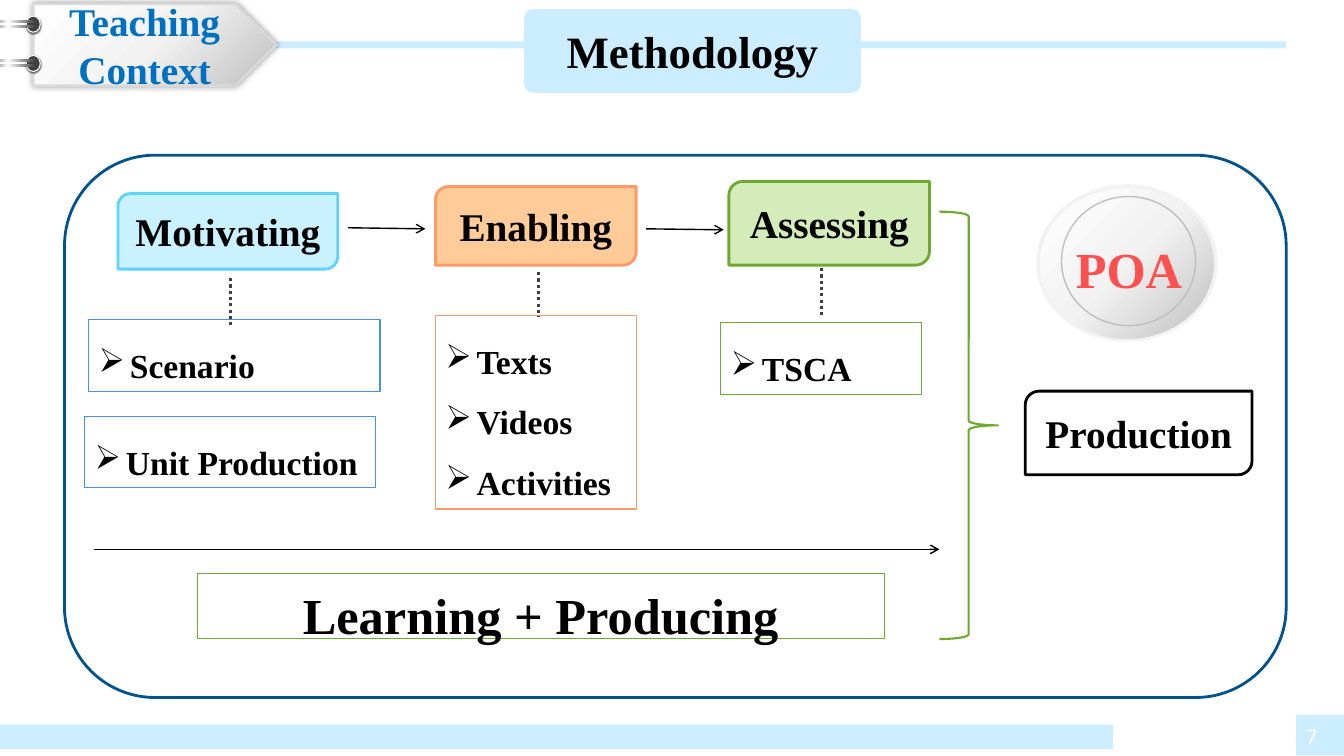
from dataclasses import dataclass

from lxml import etree
from pptx import Presentation
from pptx.dml.color import RGBColor
from pptx.enum.dml import MSO_LINE
from pptx.enum.shapes import MSO_CONNECTOR, MSO_SHAPE
from pptx.enum.text import MSO_ANCHOR, PP_ALIGN
from pptx.oxml.ns import qn
from pptx.util import Inches, Pt

RECTANGLE, ROUNDED = MSO_SHAPE.RECTANGLE, MSO_SHAPE.ROUNDED_RECTANGLE
PLATE, OVAL = MSO_SHAPE.PENTAGON, MSO_SHAPE.OVAL
DONUT, BRACE = MSO_SHAPE.DONUT, MSO_SHAPE.RIGHT_BRACE
STAGE = MSO_SHAPE.ROUND_2_DIAG_RECTANGLE
STRAIGHT, DOTTED = MSO_CONNECTOR.STRAIGHT, MSO_LINE.ROUND_DOT
LEFT, CENTER = PP_ALIGN.LEFT, PP_ALIGN.CENTER
TOP, MIDDLE = MSO_ANCHOR.TOP, MSO_ANCHOR.MIDDLE

FONT = "Times New Roman"
BLACK, PALE, GREEN, BLUE, ORANGE = "000000", "CCECFF", "6EAA2E", "4A8EF2", "FF9966"
SILVER = ((0, "FFFFFF"), (50, "F2F2F2"), (100, "BFBFBF"))
WIRE = ((0, "404040"), (53, "FFFFFF"), (100, "262626"))


@dataclass
class Text:
    """Wording of a shape and how it is set."""
    lines: tuple[str, ...]
    size: float
    color: str = BLACK
    font: str | None = FONT
    bold: bool = True
    align: PP_ALIGN = CENTER
    anchor: MSO_ANCHOR = MIDDLE
    bullet: bool = False
    top_inset: float = 0.05
    wrap: bool = True


@dataclass
class Block:
    """A preset shape placed in percent of the slide's size."""
    kind: MSO_SHAPE
    at: tuple[float, float, float, float]
    fill: str | tuple[tuple[int, str], ...] | None = None
    angle: float = 315
    line: str | None = None
    weight: float = 0.75
    adjust: tuple[float, ...] = ()
    shadow: tuple[float, float, int] | None = None
    text: Text | None = None


@dataclass
class Link:
    """A straight line between two points in percent of the slide's size."""
    start: tuple[float, float]
    end: tuple[float, float]
    dotted: bool = False


def bullets(left: float, top: float, width: float, height: float, line: str, *lines: str) -> Block:
    """Describe an outlined list."""
    text = Text(lines, 24, align=LEFT, anchor=TOP, bullet=True)
    return Block(RECTANGLE, (left, top, width, height), line=line, text=text)


def stage(left: float, top: float, width: float, height: float,
          fill: str | None, line: str, label: str) -> Block:
    """Describe a labelled stage of the method."""
    return Block(STAGE, (left, top, width, height), fill, line=line, weight=2, text=Text((label,), 28))


BINDER_TOPS = [2.13 + 5.2 * row for row in range(2)]
RINGS = [Block(OVAL, (1.95, top, 1.05, 2.13), "404040", line="FFFFFF", shadow=(1, 1, 55))
         for top in BINDER_TOPS]
WIRES = [Block(ROUNDED, (-1.2, top + offset, 3.83, 0.4), WIRE, 180)
         for top in BINDER_TOPS for offset in (0.54, 1.2)]

ITEMS: list[Block | Link] = [
    Block(RECTANGLE, (0, 95.87, 82.8, 3.2), PALE),
    Block(RECTANGLE, (96.45, 94.53, 3.55, 5.4), PALE,
          text=Text(("7",), 16, "FFFFFF", None, False, LEFT)),
    Link((61.13, 35.47), (61.13, 41.73), True),
    Link((40.05, 36), (40.05, 41.87), True),
    Link((17.18, 36.8), (17.18, 43.07), True),
    Block(RECTANGLE, (6.4, 5.47, 89.3, 0.93), PALE),
    Block(PLATE, (2.48, 0.53, 18.08, 10.8), SILVER, line="D9D9D9", weight=1.75,
          shadow=(5, 0, 40), text=Text(("Teaching Context",), 28, "0070C0")),
    *RINGS,
    *WIRES,
    Block(ROUNDED, (39, 1.2, 25.05, 11.07), PALE, adjust=(0.11,), text=Text(("Methodology",), 32)),
    Block(DONUT, (77.1, 24.4, 13.5, 20.8), "F2F2F2", adjust=(0.05,)),
    Block(OVAL, (77.4, 24.93, 12.9, 19.87), SILVER),
    Block(OVAL, (78.98, 26, 9.98, 17.07), line="BFBFBF", weight=1),
    Block(RECTANGLE, (79.43, 30.13, 9.15, 9.07),
          text=Text(("POA",), 36, "FF5050", anchor=TOP, top_inset=0.1, wrap=False)),
    bullets(6.6, 42.27, 21.68, 9.47, BLUE, "Scenario"),
    stage(8.78, 25.6, 16.35, 10, "C9F1FF", "5DD4FF", "Motivating"),
    stage(32.4, 24.67, 14.93, 10.4, "FFCC99", ORANGE, "Enabling"),
    stage(54.23, 24, 14.93, 11.07, "D3ECB9", GREEN, "Assessing"),
    bullets(32.4, 41.73, 14.93, 25.6, ORANGE, "Texts", "Videos", "Activities"),
    bullets(53.63, 42.67, 14.93, 9.47, GREEN, "TSCA"),
    Block(BRACE, (69.9, 28, 4.35, 56.53), line=GREEN, weight=1.5, adjust=(0.08, 0.5)),
    Link((25.88, 30.13), (31.65, 30.27)),
    Link((48.08, 30.27), (53.85, 30.4)),
    stage(76.28, 51.73, 16.88, 11.07, None, BLACK, "Production"),
    Block(ROUNDED, (4.8, 20.53, 90.9, 71.73), line="00538E", weight=2),
    Link((6.98, 72.67), (69.9, 72.67)),
    Block(RECTANGLE, (14.7, 75.87, 51.08, 8.53), line=GREEN,
          text=Text(("Learning + Producing",), 36, anchor=TOP, top_inset=0.1)),
    bullets(6.3, 55.07, 21.68, 9.47, BLUE, "Unit Production"),
]


def rgb(value: str) -> RGBColor:
    """Turn a hex string into a colour."""
    return RGBColor.from_string(value)


def add_element(parent, tag: str, **attributes):
    """Append a DrawingML element."""
    return etree.SubElement(parent, qn(tag), {name: str(value) for name, value in attributes.items()})


def paint(shape, block: Block) -> None:
    """Set the fill, outline and shadow of a shape."""
    shape.shadow.inherit = False
    if block.fill is None:
        shape.fill.background()
    elif isinstance(block.fill, str):
        shape.fill.solid()
        shape.fill.fore_color.rgb = rgb(block.fill)
    else:
        shape.fill.gradient()
        shape.fill.gradient_angle = block.angle
        stops = shape.element.spPr.find(".//" + qn("a:gsLst"))
        for stop in list(stops):
            stops.remove(stop)
        for position, color in block.fill:
            stop = add_element(stops, "a:gs", pos=position * 1000)
            add_element(stop, "a:srgbClr", val=color)
    if block.line:
        shape.line.color.rgb = rgb(block.line)
        shape.line.width = Pt(block.weight)
    else:
        shape.line.fill.background()
    if block.shadow:
        blur, distance, opacity = block.shadow
        effects = shape.element.spPr.find(qn("a:effectLst"))
        outer = add_element(effects, "a:outerShdw", blurRad=Pt(blur), dist=Pt(distance),
                            dir=5400000, algn="ctr", rotWithShape=0)
        color = add_element(outer, "a:srgbClr", val=BLACK)
        add_element(color, "a:alpha", val=opacity * 1000)


def write(shape, text: Text) -> None:
    """Put the wording into a shape."""
    frame = shape.text_frame
    frame.word_wrap = text.wrap
    frame.vertical_anchor = text.anchor
    frame.margin_top = Inches(text.top_inset)
    for index, line in enumerate(text.lines):
        paragraph = frame.add_paragraph() if index else frame.paragraphs[0]
        paragraph.alignment = text.align
        if text.bullet:
            paragraph.line_spacing = 1.5
            properties = paragraph._p.get_or_add_pPr()
            properties.set("marL", str(Inches(0.31)))
            properties.set("indent", str(-Inches(0.31)))
            add_element(properties, "a:buChar", char="➢")
        run = paragraph.add_run()
        run.text = line
        run.font.size = Pt(text.size)
        run.font.bold = text.bold
        run.font.color.rgb = rgb(text.color)
        if text.font:
            run.font.name = text.font


def main() -> None:
    """Build and save the slide."""
    presentation = Presentation()
    presentation.slide_width, presentation.slide_height = Inches(13.33), Inches(7.5)
    slide = presentation.slides.add_slide(presentation.slide_layouts[6])

    def place(x: float, y: float) -> tuple[int, int]:
        """Turn percentages into slide lengths."""
        return int(presentation.slide_width * x / 100), int(presentation.slide_height * y / 100)

    def draw_block(block: Block) -> None:
        """Draw a shape with its text."""
        shape = slide.shapes.add_shape(block.kind, *place(*block.at[:2]), *place(*block.at[2:]))
        for index, value in enumerate(block.adjust):
            shape.adjustments[index] = value
        paint(shape, block)
        if block.text:
            write(shape, block.text)

    def draw_link(link: Link) -> None:
        """Draw a dotted line or an arrow."""
        connector = slide.shapes.add_connector(STRAIGHT, *place(*link.start), *place(*link.end))
        connector.line.color.rgb = rgb("404040" if link.dotted else BLACK)
        connector.line.width = Pt(2.25 if link.dotted else 1)
        if link.dotted:
            connector.line.dash_style = DOTTED
        else:
            add_element(connector.line._get_or_add_ln(), "a:tailEnd", type="arrow")
        add_element(connector._element.spPr, "a:effectLst")

    for item in ITEMS:
        if isinstance(item, Block):
            draw_block(item)
        else:
            draw_link(item)
    presentation.save("out.pptx")


if __name__ == "__main__":
    main()
